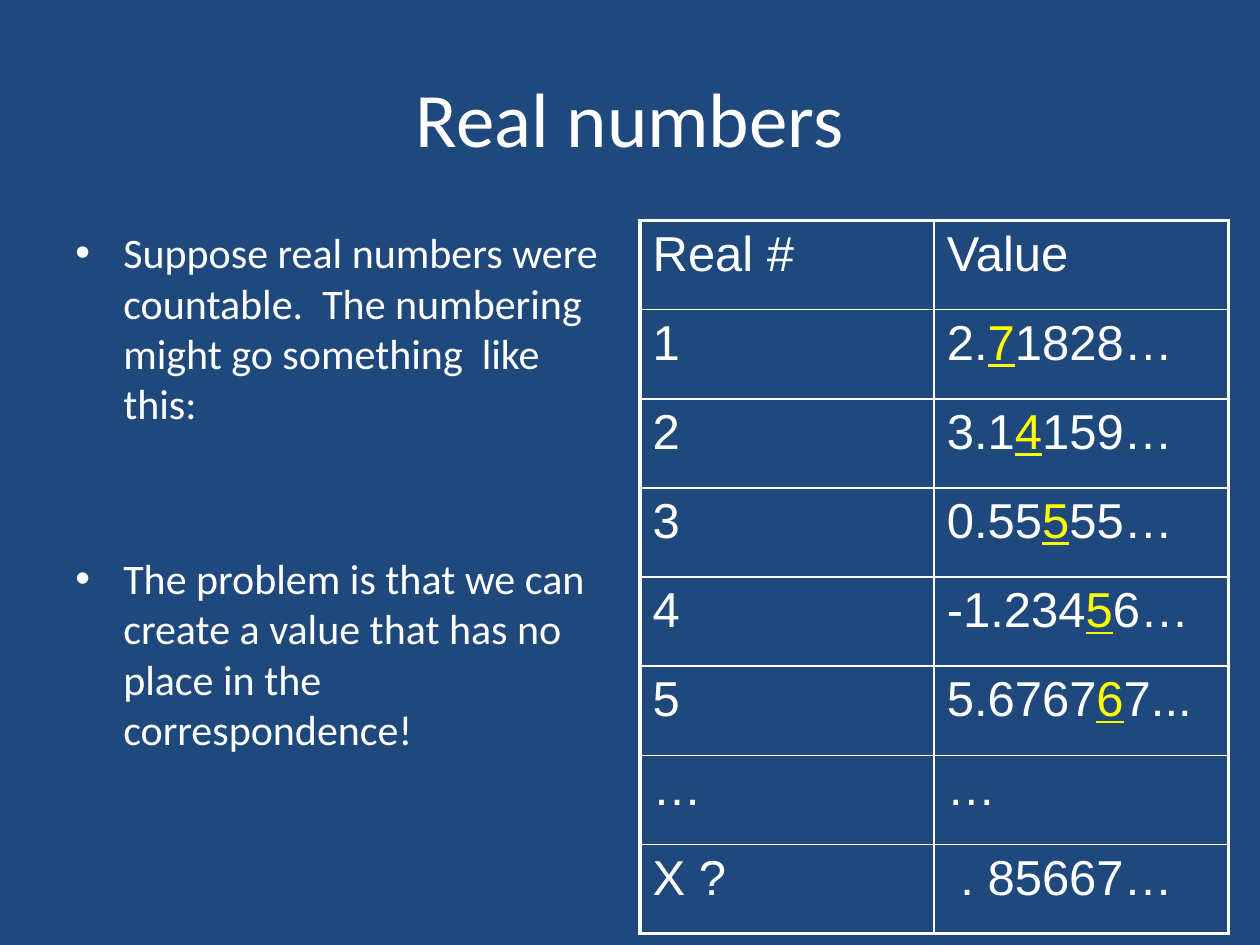
"""Build the slide on numbering the real numbers."""
from lxml import etree
from pptx import Presentation
from pptx.dml.color import RGBColor
from pptx.enum.text import MSO_ANCHOR, PP_ALIGN
from pptx.oxml.ns import qn
from pptx.util import Inches, Pt

MIDDLE = MSO_ANCHOR.MIDDLE
CENTER = PP_ALIGN.CENTER
COLORS = {"background": "1F497D", "text": "FFFFFF", "diagonal": "FFFF00"}
THIN, THICK = Pt(1), Pt(2.25)

BULLETS = [
    ("Suppose real numbers were countable.  The numbering might go something  like this:", 0),
    ("The problem is that we can create a value that has no place in the correspondence!", 71),
]
ROWS = [
    ("Real #", ["Value"]),
    ("1", ["2.", "7", "1828…"]),
    ("2", ["3.1", "4", "159…"]),
    ("3", ["0.55", "5", "55…"]),
    ("4", ["-1.234", "5", "6…"]),
    ("5", ["5.6767", "6", "7..."]),
    ("…", ["…"]),
    ("X ?", [" . 85667…"]),
]


def add_run(paragraph, text, size, name, color="text", underline=False):
    run = paragraph.add_run()
    run.text = text
    font_format = {"size": Pt(size), "name": name, "bold": False, "underline": underline}
    for attribute, value in font_format.items():
        setattr(run.font, attribute, value)
    run.font.color.rgb = RGBColor.from_string(COLORS[color])


def add_border(properties, position, side, width):
    line = etree.Element(qn(f"a:ln{side}"), w=str(width))
    fill = etree.SubElement(line, qn("a:solidFill"))
    etree.SubElement(fill, qn("a:srgbClr"), val=COLORS["text"])
    properties.insert(position, line)


presentation = Presentation()
presentation.slide_width = Inches(10)
presentation.slide_height = Inches(7.5)
slide = presentation.slides.add_slide(presentation.slide_layouts[6])
slide.background.fill.solid()
slide.background.fill.fore_color.rgb = RGBColor.from_string(COLORS["background"])

title = slide.shapes.add_textbox(Inches(0.5), Inches(0.3), Inches(9), Inches(1.25)).text_frame
title.word_wrap = True
title.vertical_anchor = MIDDLE
title.paragraphs[0].alignment = CENTER
add_run(title.paragraphs[0], "Real numbers", 44, "Calibri")

body = slide.shapes.add_textbox(Inches(0.5), Inches(1.75), Inches(4.42), Inches(4.95)).text_frame
body.word_wrap = True
for index, (text, space_before) in enumerate(BULLETS):
    paragraph = body.add_paragraph() if index else body.paragraphs[0]
    paragraph.space_before = Pt(space_before)
    add_run(paragraph, text, 24, "Calibri")
    properties = paragraph._p.get_or_add_pPr()
    properties.set("marL", str(Inches(0.38)))
    properties.set("indent", str(-Inches(0.38)))
    etree.SubElement(properties, qn("a:buFont"), typeface="Arial")
    etree.SubElement(properties, qn("a:buChar"), char="•")

table = slide.shapes.add_table(
    len(ROWS), 2, Inches(5.08), Inches(1.75), Inches(4.67), Inches(5.66)
).table
table.first_row = False
table.horz_banding = False
for row, (label, value) in enumerate(ROWS):
    for column, pieces in enumerate(([label], value)):
        cell = table.cell(row, column)
        cell.fill.background()
        for index, piece in enumerate(pieces):
            diagonal = index == 1
            color = "diagonal" if diagonal else "text"
            add_run(cell.text_frame.paragraphs[0], piece, 28, "Arial", color, diagonal)
        outer_sides = {
            "L": column == 0,
            "R": column == 1,
            "T": row == 0,
            "B": row == len(ROWS) - 1,
        }
        for position, (side, outer) in enumerate(outer_sides.items()):
            add_border(cell._tc.get_or_add_tcPr(), position, side, THICK if outer else THIN)

presentation.save("out.pptx")
